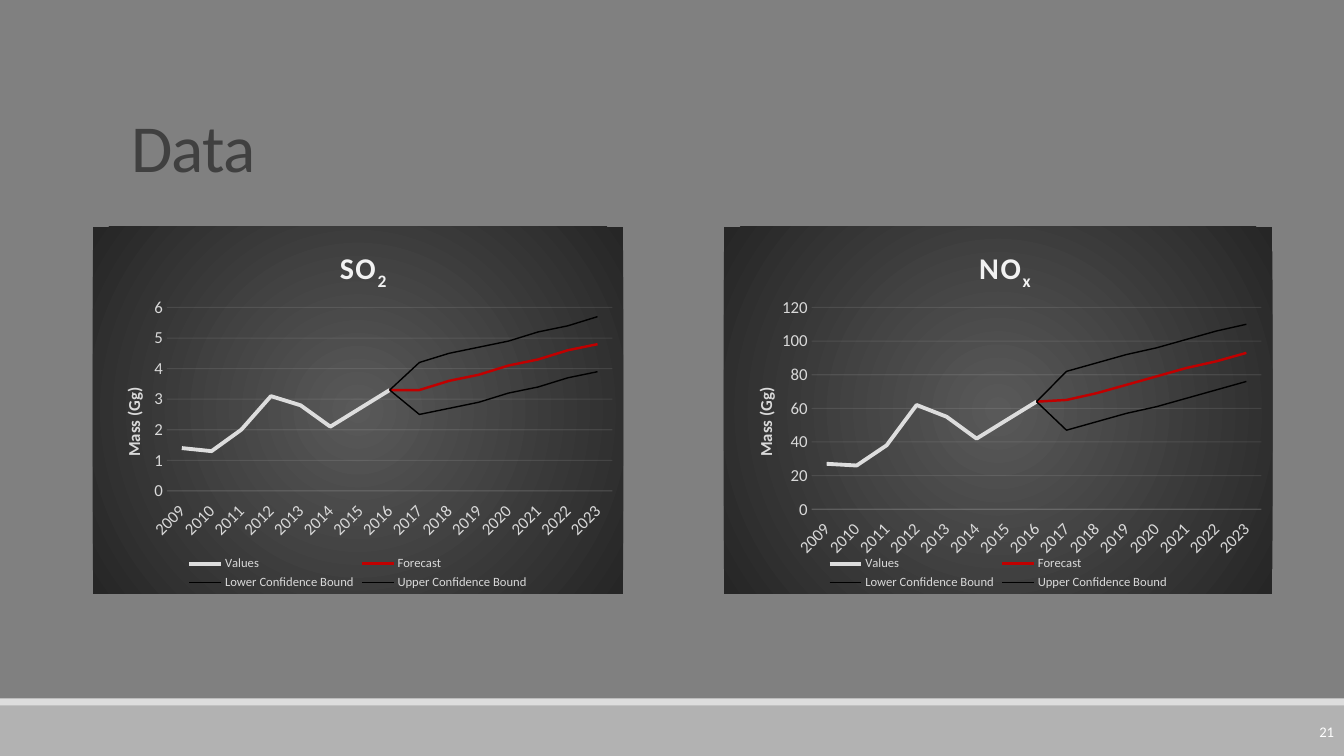
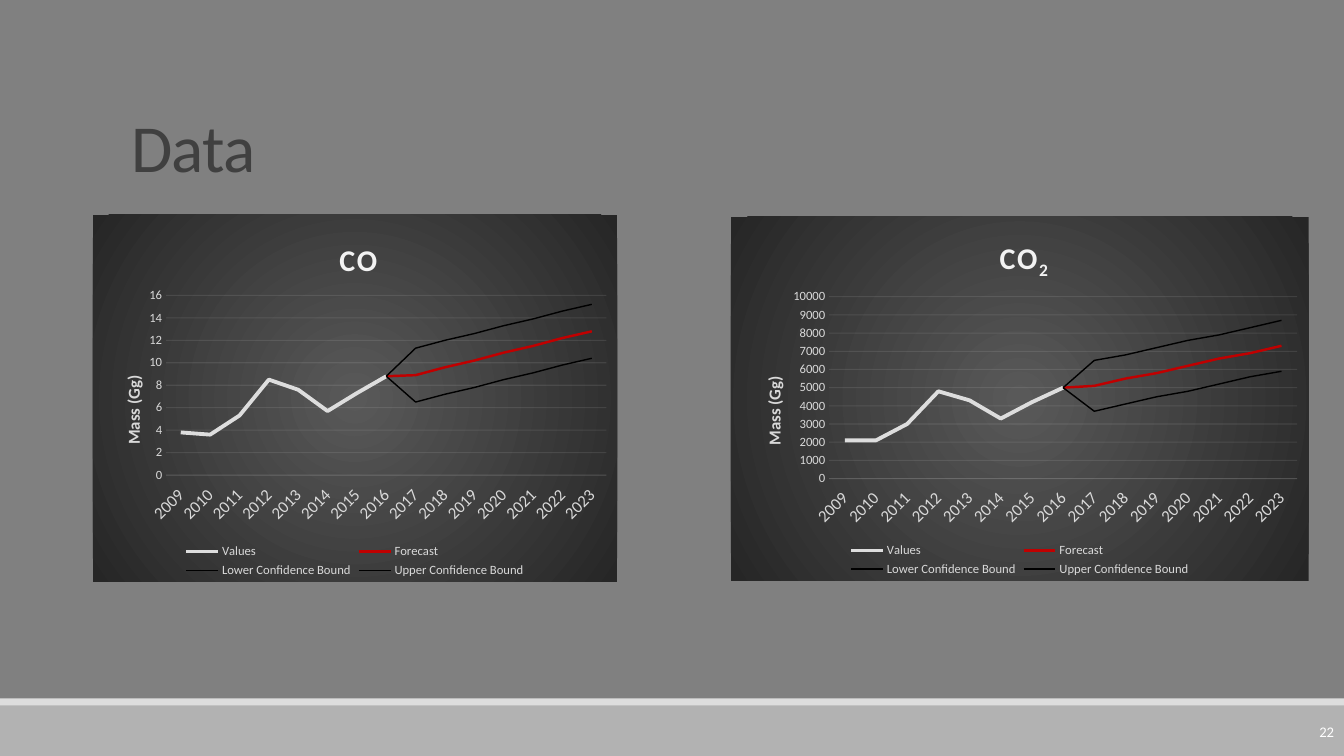
from lxml.etree import SubElement
from pptx import Presentation
from pptx.chart.data import CategoryChartData
from pptx.dml.color import RGBColor
from pptx.enum.chart import XL_CHART_TYPE, XL_LEGEND_POSITION, XL_TICK_LABEL_POSITION, XL_TICK_MARK
from pptx.enum.shapes import MSO_SHAPE
from pptx.enum.text import MSO_ANCHOR, PP_ALIGN
from pptx.oxml import parse_xml
from pptx.oxml.ns import nsdecls, qn
from pptx.util import Inches, Pt

WIDTH, HEIGHT = 13.33, 7.5
FONT = "Calibri"
COLORS = {
    "background": "808080", "band": "B2B2B2", "stripe": "DDDDDD",
    "heading": "404040", "number": "FFFFFF",
    "chart_center": "595959", "chart_edge": "262626",
    "chart_title": "F2F2F2", "label": "D9D9D9", "rule": "F2F2F2",
    "values": "DDDDDD", "forecast": "C00000", "bound": "000000",
}
BANDS = [("band", 7, 0.5), ("stripe", 6.93, 0.07)]  # colour, top, height

YEARS = [str(year) for year in range(2009, 2024)]
SERIES = [  # name, colour, line width
    ("Values", "values", 2.75),
    ("Forecast", "forecast", 1.75),
    ("Lower Confidence Bound", "bound", 1),
    ("Upper Confidence Bound", "bound", 1),
]

# "plot" holds the left edge and the height of the plot as shares of the chart
PAGES = [
    {"title": "Data", "number": "21", "value_size": 12, "charts": [
        {"name": ("SO", "2"), "at": (0.92, 2.25, 5.26, 3.64), "plot": (0.14, 0.5),
         "values": [1.4, 1.3, 2, 3.1, 2.8, 2.1, 2.7, 3.3],
         "outlook": [[3.3, 3.6, 3.8, 4.1, 4.3, 4.6, 4.8],
                     [2.5, 2.7, 2.9, 3.2, 3.4, 3.7, 3.9],
                     [4.2, 4.5, 4.7, 4.9, 5.2, 5.4, 5.7]]},
        {"name": ("NO", "x"), "at": (7.18, 2.25, 5.44, 3.64), "plot": (0.16, 0.55),
         "values": [27, 26, 38, 62, 55, 42, 53, 64],
         "outlook": [[65, 69, 74, 79, 84, 88, 93],
                     [47, 52, 57, 61, 66, 71, 76],
                     [82, 87, 92, 96, 101, 106, 110]]},
    ]},
    {"title": "Data", "number": "22", "value_size": 9, "charts": [
        {"name": ("CO", ""), "at": (0.92, 2.13, 5.2, 3.64), "plot": (0.14, 0.49),
         "values": [3.8, 3.6, 5.3, 8.5, 7.6, 5.7, 7.3, 8.8],
         "outlook": [[8.9, 9.6, 10.2, 10.9, 11.5, 12.2, 12.8],
                     [6.5, 7.2, 7.8, 8.5, 9.1, 9.8, 10.4],
                     [11.3, 12, 12.6, 13.3, 13.9, 14.6, 15.2]]},
        {"name": ("CO", "2"), "at": (7.25, 2.15, 5.73, 3.61), "plot": (0.17, 0.5),
         "values": [2100, 2100, 3000, 4800, 4300, 3300, 4200, 5000],
         "outlook": [[5100, 5500, 5800, 6200, 6600, 6900, 7300],
                     [3700, 4100, 4500, 4800, 5200, 5600, 5900],
                     [6500, 6800, 7200, 7600, 7900, 8300, 8700]]},
    ]},
]


def color(name):
    return RGBColor.from_string(COLORS[name])


def set_font(font, size, color_name, bold=False):
    formats = {"name": FONT, "size": Pt(size), "bold": bold}
    for key, value in formats.items():
        setattr(font, key, value)
    font.color.rgb = color(color_name)


def add_span(para, text, size, color_name, bold=False, **attributes):
    """Add a run; attributes go to its a:rPr, such as spc or baseline."""
    span = para.add_run()
    span.text = text
    set_font(span.font, size, color_name, bold)
    for key, value in attributes.items():
        span.font._element.set(key, str(value))


def place(element, index, **shares):
    """Give a chart part a manual layout in shares of the chart."""
    for old in element.findall(qn("c:layout")):
        element.remove(old)
    layout = parse_xml(f"<c:layout {nsdecls('c')}><c:manualLayout/></c:layout>")
    manual = layout[0]
    if "w" in shares:
        SubElement(manual, qn("c:layoutTarget")).set("val", "inner")
    for key in ("xMode", "yMode"):
        SubElement(manual, qn(f"c:{key}")).set("val", "edge")
    for key, value in shares.items():
        SubElement(manual, qn(f"c:{key}")).set("val", f"{value:.2f}")
    element.insert(index, layout)


def fill_chart(chart):
    """Fill the chart area with a radial gradient."""
    stops = "".join(
        f'<a:gs pos="{position}"><a:srgbClr val="{COLORS[name]}"/></a:gs>'
        for position, name in ((0, "chart_center"), (100000, "chart_edge")))
    area = parse_xml(
        f'<c:spPr {nsdecls("c", "a")}><a:gradFill><a:gsLst>{stops}</a:gsLst>'
        '<a:path path="circle"><a:fillToRect l="50000" t="50000" r="50000" b="50000"/></a:path>'
        '</a:gradFill><a:ln><a:noFill/></a:ln></c:spPr>')
    chart.element.find(qn("c:chart")).addnext(area)


def style_faint_line(line):
    line.width = Pt(0.75)
    line.color.rgb = color("rule")
    for shade in line._get_or_add_ln().iter(qn("a:srgbClr")):
        SubElement(shade, qn("a:alpha")).set("val", "10000")


def style_axes(chart, value_size):
    years, masses = chart.category_axis, chart.value_axis
    for axis, size in ((years, 12), (masses, value_size)):
        axis.major_tick_mark = axis.minor_tick_mark = XL_TICK_MARK.NONE
        set_font(axis.tick_labels.font, size, "label")
    years.tick_label_position = XL_TICK_LABEL_POSITION.LOW
    style_faint_line(years.format.line)
    masses.format.line.fill.background()
    masses.has_major_gridlines = True
    style_faint_line(masses.major_gridlines.format.line)
    add_span(masses.axis_title.text_frame.paragraphs[0], "Mass (Gg)", 12, "label", True)

    turns = (("c:catAx/c:txPr", -45), ("c:valAx/c:title", -90))
    for part, degrees in turns:
        for body in chart.element.xpath(f".//{part}//a:bodyPr"):
            body.set("rot", str(degrees * 60000))
            body.set("vert", "horz")


def add_forecast_chart(page, content, value_size):
    history = content["values"]
    lead = [None] * (len(history) - 1) + history[-1:]
    rows = [history + [None] * (len(YEARS) - len(history))]
    rows += [lead + outlook for outlook in content["outlook"]]
    data = CategoryChartData()
    data.categories = YEARS
    for (name, _, _), row in zip(SERIES, rows):
        data.add_series(name, row)

    frame = page.shapes.add_chart(
        XL_CHART_TYPE.LINE, *map(Inches, content["at"]), data)
    chart = frame.chart
    set_font(chart.font, 10, "bound")
    fill_chart(chart)
    chart.plots[0].vary_by_categories = False
    for series, (_, color_name, width) in zip(chart.plots[0].series, SERIES):
        series.smooth = False
        series.format.line.width = Pt(width)
        series.format.line.color.rgb = color(color_name)

    chart.has_title = True
    para = chart.chart_title.text_frame.paragraphs[0]
    formula, subscript = content["name"]
    add_span(para, formula, 21.5, "chart_title", True, spc=100)
    if subscript:
        add_span(para, subscript, 21.5, "chart_title", True, spc=100, baseline=-25000)
    chart.has_legend = True
    chart.legend.position = XL_LEGEND_POSITION.BOTTOM
    chart.legend.include_in_layout = False
    set_font(chart.legend.font, 9, "label")
    style_axes(chart, value_size)

    left, height = content["plot"]
    place(chart.element.find(".//" + qn("c:plotArea")), 0,
          x=left, y=0.22, w=0.98 - left, h=height)
    place(chart.chart_title._element, 1, x=0.46, y=0.05)
    place(chart.value_axis.axis_title._element, 1, x=0.05, y=0.43)


def add_base(deck, title, number):
    """Add a page with the shared bands, title and page number."""
    page = deck.slides.add_slide(deck.slide_layouts[5])
    for color_name, top, height in BANDS:
        band = page.shapes.add_shape(
            MSO_SHAPE.RECTANGLE, 0, Inches(top), Inches(WIDTH), Inches(height))
        band.shadow.inherit = False
        band.fill.solid()
        band.fill.fore_color.rgb = color(color_name)
        band.line.fill.background()

    heading = page.shapes.title
    number_box = page.shapes.add_textbox(0, 0, 0, 0)
    texts = [
        (heading, (1.2, 0.31, 11, 1.59), MSO_ANCHOR.BOTTOM, PP_ALIGN.LEFT,
         title, 48, "heading", {"spc": -50}),
        (number_box, (11.9, 7.06, 1.43, 0.4), MSO_ANCHOR.MIDDLE, PP_ALIGN.RIGHT,
         number, 10.5, "number", {}),
    ]
    for box, at, anchor, align, text, size, color_name, extra in texts:
        for key, value in zip(("left", "top", "width", "height"), at):
            setattr(box, key, Inches(value))
        box.text_frame.word_wrap = True
        box.text_frame.vertical_anchor = anchor
        para = box.text_frame.paragraphs[0]
        para.alignment = align
        add_span(para, text, size, color_name, **extra)
    heading.text_frame.paragraphs[0].line_spacing = 0.85
    return page


def main():
    deck = Presentation()
    deck.slide_width, deck.slide_height = Inches(WIDTH), Inches(HEIGHT)
    backdrop = deck.slide_master.background.fill
    backdrop.solid()
    backdrop.fore_color.rgb = color("background")
    for content in PAGES:
        page = add_base(deck, content["title"], content["number"])
        for chart_content in content["charts"]:
            add_forecast_chart(page, chart_content, content["value_size"])
    deck.save("out.pptx")


if __name__ == "__main__":
    main()
